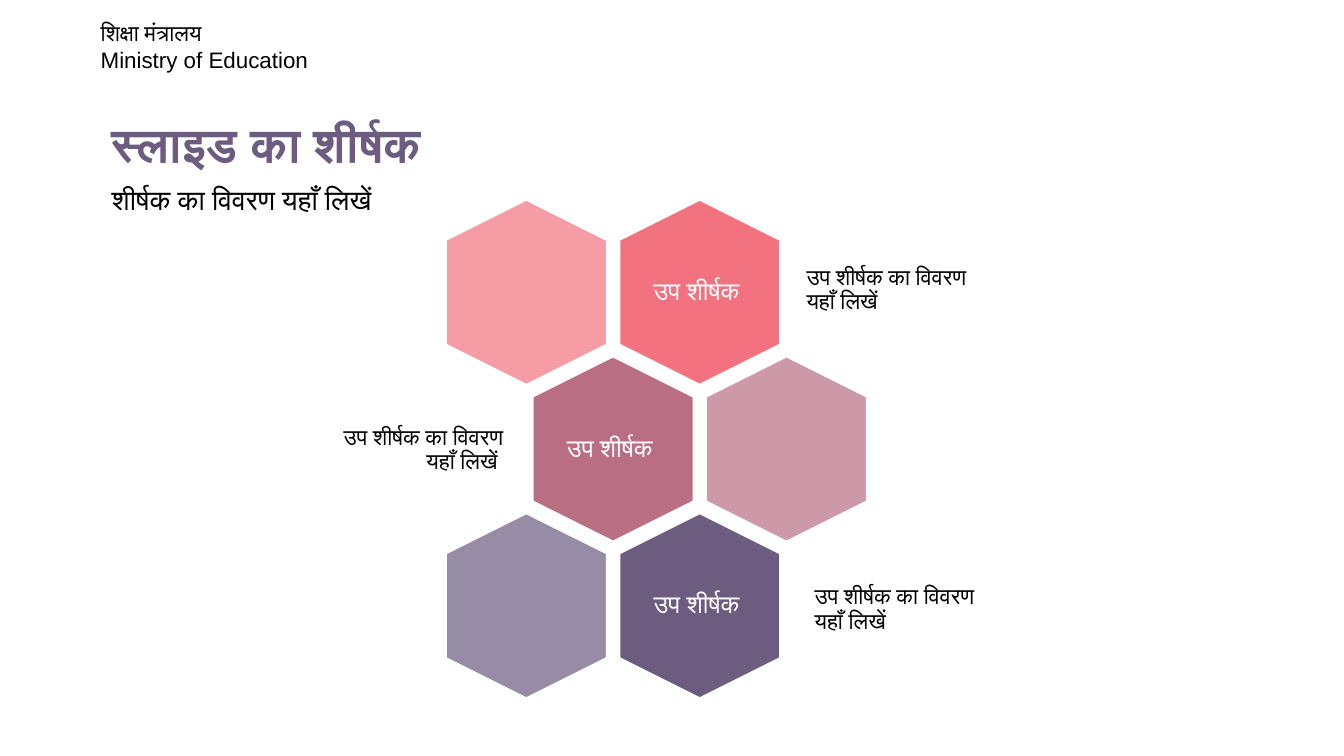
from lxml.etree import SubElement
from pptx import Presentation
from pptx.dml.color import RGBColor
from pptx.enum.shapes import MSO_SHAPE
from pptx.enum.text import MSO_ANCHOR, PP_ALIGN
from pptx.oxml.ns import qn
from pptx.util import Inches, Pt

COLORS = {
    "black": "000000",
    "white": "FFFFFF",
    "coral": "F2727F",
    "rose": "B96E84",
    "purple": "6C5C80",
}
MINISTRY = ["शिक्षा मंत्रालय", "Ministry of Education"]
TITLE = ["स्लाइड का शीर्षक"]
SUBTITLE = ["शीर्षक का विवरण यहाँ लिखें"]
HEXAGON_LABEL = ["उप शीर्षक "]
ROWS = [
    {"color": "coral", "solid": 1, "faded": 0, "align": PP_ALIGN.LEFT,
     "note": "उप शीर्षक का विवरण यहाँ लिखें", "note_at": (7.93, 2.33, 2.04, 1.1)},
    {"color": "rose", "solid": 0.5, "faded": 1.5, "align": PP_ALIGN.RIGHT,
     "note": "उप शीर्षक का विवरण यहाँ लिखें ", "note_at": (3.09, 3.92, 1.97, 1.1)},
    {"color": "purple", "solid": 1, "faded": 0, "align": PP_ALIGN.LEFT,
     "note": "उप शीर्षक का विवरण यहाँ लिखें", "note_at": (8.01, 5.5, 2.04, 1.1)},
]
FIRST_X, FIRST_Y = 5.22, 2.9
COLUMN_STEP, ROW_STEP = 1.72, 1.555
HEXAGON_WIDTH, HEXAGON_HEIGHT = 1.83, 1.59
LABEL_WIDTH, LABEL_HEIGHT = 1.09, 1.26


def rgb(name):
    return RGBColor.from_string(COLORS[name])


def add_text(slide, lines, at, size, font="Calibri", color="black", bold=False,
             align=PP_ALIGN.LEFT, anchor=MSO_ANCHOR.TOP, spacing=0.9, inset=None):
    box = slide.shapes.add_textbox(*map(Inches, at))
    frame = box.text_frame
    frame.word_wrap = True
    frame.vertical_anchor = anchor
    if inset is not None:
        frame.margin_left = frame.margin_right = Inches(inset)
        frame.margin_top = frame.margin_bottom = Inches(inset)
    for index, line in enumerate(lines):
        para = frame.add_paragraph() if index else frame.paragraphs[0]
        para.alignment = align
        para.line_spacing = spacing
        span = para.add_run()
        span.text = line
        span.font.name = font
        span.font.size = Pt(size)
        span.font.bold = bold
        span.font.color.rgb = rgb(color)


def add_hexagon(slide, center_x, center_y, color, opacity=100):
    hexagon = slide.shapes.add_shape(
        MSO_SHAPE.HEXAGON,
        Inches(center_x - HEXAGON_WIDTH / 2), Inches(center_y - HEXAGON_HEIGHT / 2),
        Inches(HEXAGON_WIDTH), Inches(HEXAGON_HEIGHT))
    hexagon.rotation = 90
    hexagon.adjustments[0] = 0.25
    hexagon.shadow.inherit = False
    hexagon.fill.solid()
    hexagon.fill.fore_color.rgb = rgb(color)
    hexagon.line.color.rgb = rgb("white")
    hexagon.line.width = Pt(1)
    if opacity < 100:
        fill_color = hexagon.element.spPr.find(qn("a:solidFill"))[0]
        SubElement(fill_color, qn("a:alpha"), val=str(opacity * 1000))


def main():
    deck = Presentation()
    deck.slide_width, deck.slide_height = Inches(13.33), Inches(7.5)
    slide = deck.slides.add_slide(deck.slide_layouts[6])

    add_text(slide, MINISTRY, (0.9, 0.14, 5.19, 0.64), 16, font="Arial", spacing=1.0)
    add_text(slide, TITLE, (1.01, 1.16, 6.13, 0.47), 34, font="Arial",
             color="purple", bold=True)
    add_text(slide, SUBTITLE, (1.01, 1.8, 7.19, 0.37), 20)

    for index, row in enumerate(ROWS):
        center_y = FIRST_Y + index * ROW_STEP
        solid_x = FIRST_X + row["solid"] * COLUMN_STEP
        faded_x = FIRST_X + row["faded"] * COLUMN_STEP
        add_hexagon(slide, solid_x, center_y, row["color"])
        add_hexagon(slide, faded_x, center_y, row["color"], opacity=70)
        label_at = (solid_x - LABEL_WIDTH / 2, center_y - LABEL_HEIGHT / 2,
                    LABEL_WIDTH, LABEL_HEIGHT)
        add_text(slide, HEXAGON_LABEL, label_at, 18, color="white",
                 align=PP_ALIGN.CENTER, anchor=MSO_ANCHOR.MIDDLE, inset=0.07)
        add_text(slide, [row["note"]], row["note_at"], 16, align=row["align"],
                 anchor=MSO_ANCHOR.MIDDLE, inset=0.07)

    deck.save("out.pptx")


if __name__ == "__main__":
    main()
